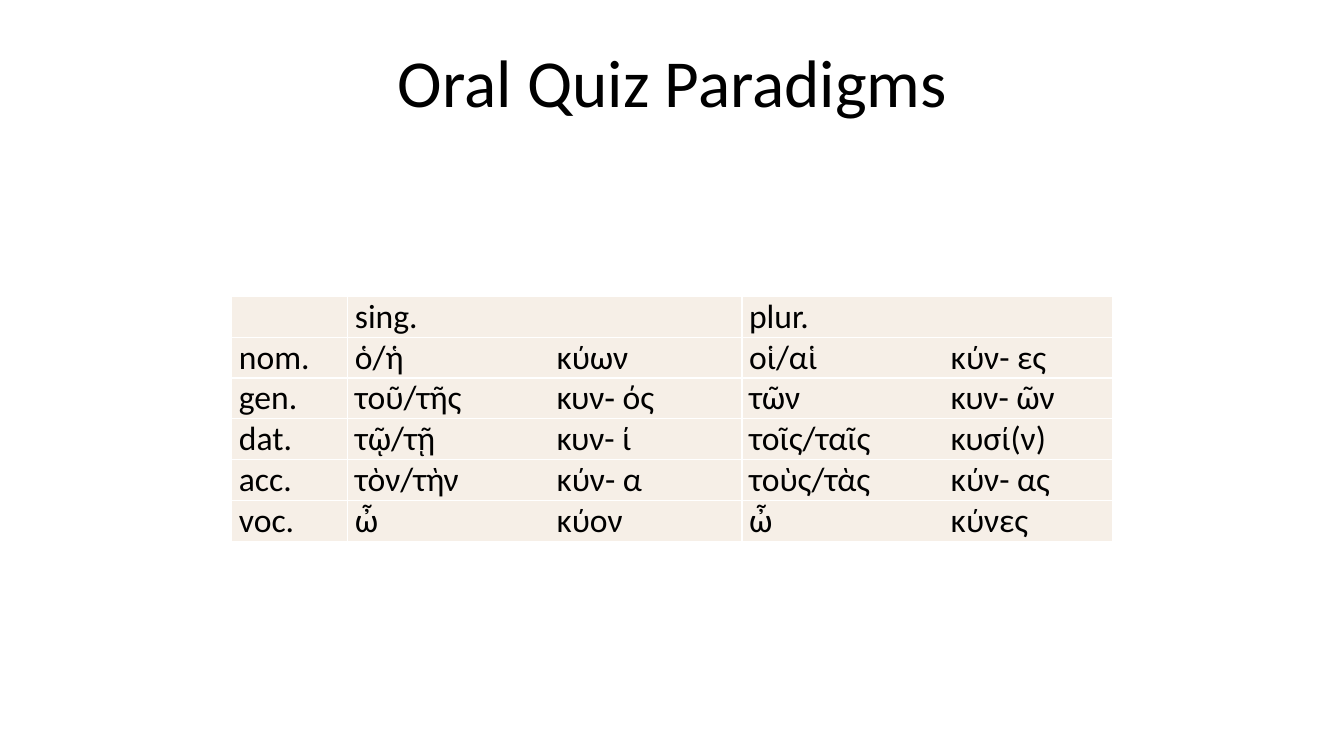
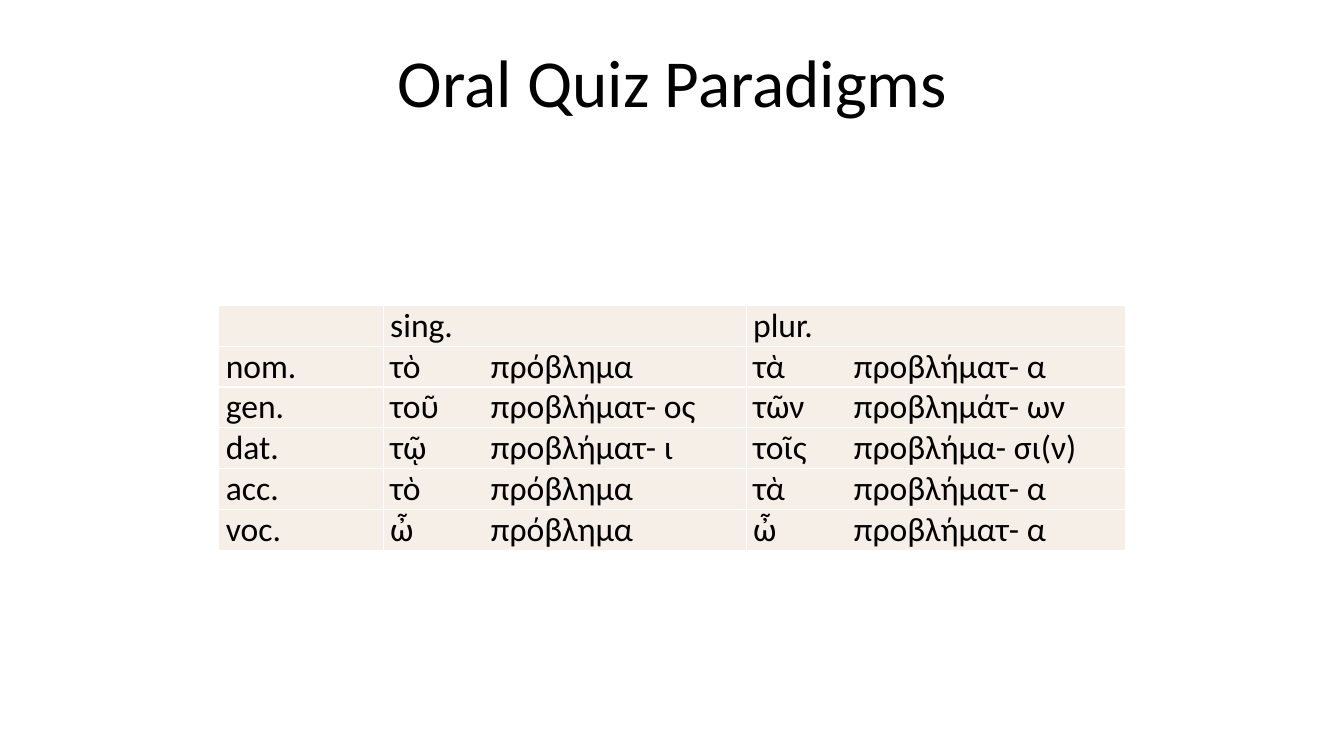
"""Build two slides of Greek noun paradigms for an oral quiz."""
import pptx
import pptx.dml.color
import pptx.enum.text
import pptx.oxml
import pptx.oxml.ns
import pptx.util

Inches = pptx.util.Inches
Pt = pptx.util.Pt
Align = pptx.enum.text.PP_ALIGN
Anchor = pptx.enum.text.MSO_ANCHOR

theme = {
    "font": "Calibri",
    "ink": "000000",
    "fill": "F6EFE7",
    "rule": "FFFFFF",
    "title": 48,
    "body": 24,
}

acutes = {ord(vowel): 0x1F71 + 2 * step for step, vowel in enumerate("άέήίόύώ")}
height = 2.43

slides = [
    {
        "left": 2.3, "top": 2.94, "cols": [1.15, 3.91, 3.68], "tab": 2,
        "rows": [
            ("", "sing.", "plur."),
            ("nom.", "ὁ/ἡ\tκύων", "οἱ/αἱ\tκύν- ες"),
            ("gen.", "τοῦ/τῆς\tκυν‑ ός", "τῶν\tκυν- ῶν"),
            ("dat.", "τῷ/τῇ\tκυν- ί", "τοῖς/ταῖς\tκυσί(ν)"),
            ("acc.", "τὸν/τὴν\tκύν- α", "τοὺς/τὰς\tκύν- ας"),
            ("voc.", "ὦ\tκύον", "ὦ\tκύνες"),
        ],
    },
    {
        "left": 2.17, "top": 3.03, "cols": [1.63, 3.6, 3.76], "tab": 1,
        "rows": [
            ("", "sing.", "plur."),
            ("nom.", "τὸ\tπρόβλημα", "τὰ\tπροβλήματ- α"),
            ("gen.", "τοῦ\tπροβλήματ- ος", "τῶν\tπροβλημάτ- ων"),
            ("dat.", "τῷ\tπροβλήματ- ι", "τοῖς\tπροβλήμα- σι(ν)"),
            ("acc.", "τὸ\tπρόβλημα", "τὰ\tπροβλήματ- α"),
            ("voc.", "ὦ\tπρόβλημα", "ὦ\tπροβλήματ- α"),
        ],
    },
]


def write(frame, text, size, align=Align.LEFT, tab=None):
    frame.word_wrap = True
    para = frame.paragraphs[0]
    para.alignment = align
    if tab:
        stops = pptx.oxml.parse_xml(
            f'<a:tabLst {pptx.oxml.ns.nsdecls("a")}>'
            f'<a:tab pos="{Inches(tab)}" algn="l"/></a:tabLst>')
        para._p.get_or_add_pPr().append(stops)
    run = para.add_run()
    run.text = text.translate(acutes)
    run.font.name = theme["font"]
    run.font.size = Pt(size)
    run.font.color.rgb = pptx.dml.color.RGBColor.from_string(theme["ink"])


def style(cell):
    props = cell._tc.get_or_add_tcPr()
    for side in ("lnL", "lnR", "lnT", "lnB"):
        props.append(pptx.oxml.parse_xml(
            f'<a:{side} {pptx.oxml.ns.nsdecls("a")} w="{Pt(1)}"><a:solidFill>'
            f'<a:srgbClr val="{theme["rule"]}"/></a:solidFill></a:{side}>'))
    cell.fill.solid()
    cell.fill.fore_color.rgb = pptx.dml.color.RGBColor.from_string(theme["fill"])
    cell.margin_left = cell.margin_right = Inches(0.07)
    cell.margin_top = cell.margin_bottom = 0


deck = pptx.Presentation()
deck.slide_width = Inches(13.33)
deck.slide_height = Inches(7.5)

for item in slides:
    slide = deck.slides.add_slide(deck.slide_layouts[6])
    title = slide.shapes.add_textbox(
        Inches(0.67), Inches(0.08), Inches(12), Inches(1.17)).text_frame
    title.vertical_anchor = Anchor.BOTTOM
    write(title, "Oral Quiz Paradigms", theme["title"], align=Align.CENTER)

    rows, cols = item["rows"], item["cols"]
    table = slide.shapes.add_table(
        len(rows), len(cols), Inches(item["left"]), Inches(item["top"]),
        Inches(sum(cols)), Inches(height)).table
    table.first_row = False
    table.horz_banding = False
    for col, width in zip(table.columns, cols):
        col.width = Inches(width)
    for row, words in zip(table.rows, rows):
        for cell, text in zip(row.cells, words):
            style(cell)
            if text:
                stop = item["tab"] if "\t" in text else None
                write(cell.text_frame, text, theme["body"], tab=stop)

deck.save("out.pptx")
